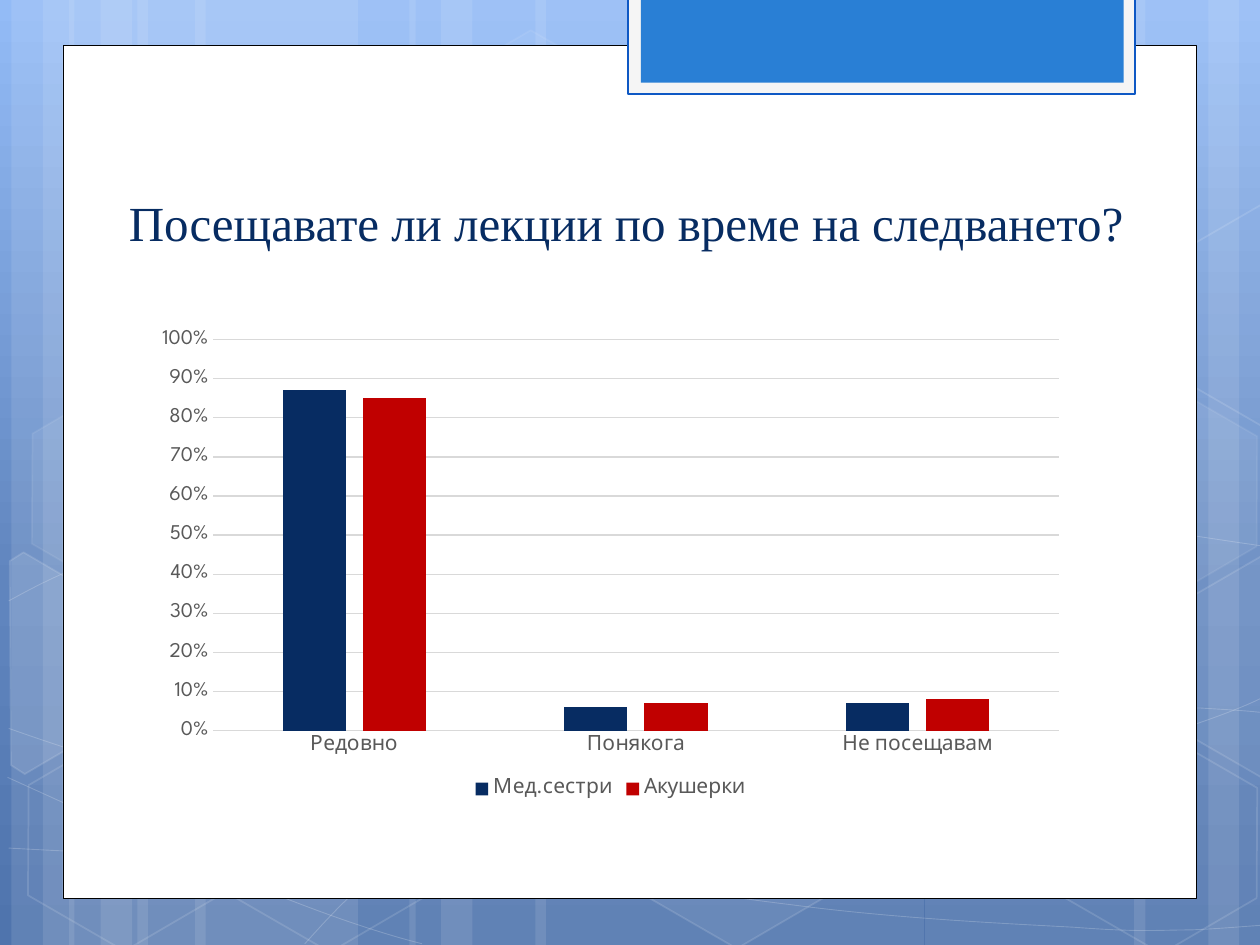
from copy import deepcopy
from math import cos, radians, sin

from lxml.etree import SubElement
from pptx import Presentation
from pptx.chart.data import CategoryChartData
from pptx.dml.color import RGBColor
from pptx.enum.chart import XL_CHART_TYPE, XL_LEGEND_POSITION, XL_TICK_MARK
from pptx.enum.shapes import MSO_SHAPE
from pptx.enum.text import MSO_ANCHOR, PP_ALIGN
from pptx.oxml.ns import qn
from pptx.util import Pt

WHITE = RGBColor(0xFF, 0xFF, 0xFF)
BLACK = RGBColor(0, 0, 0)
PALE = RGBColor(0xF5, 0xF5, 0xF5)
BLUE = RGBColor(0x29, 0x7F, 0xD5)
EDGE = RGBColor(0x0E, 0x58, 0xC4)
NAVY = RGBColor(0x07, 0x2C, 0x62)
RED = RGBColor(0xC0, 0, 0)
GREY = RGBColor(0x59, 0x59, 0x59)
GRID = RGBColor(0xD9, 0xD9, 0xD9)
SKY = [(0, RGBColor(0x93, 0xBB, 0xF6)), (0.62, RGBColor(0x60, 0x85, 0xBE)),
       (1, RGBColor(0x4F, 0x74, 0xAD))]

STRIPES = [
    (78.5, 126, 0), (6.5, 36, 0), (24.5, 60, 0), (111.5, 126, 0),
    (39.5, 36, 0), (57.5, 60, 0), (528.5, 126, 180), (690.5, 36, 180),
    (648, 60, 180), (306, 222, 0), (234, 36, 0), (252, 60, 0),
]
CURVES = [
    [(5, 484.6), (43.9, 486.7), (82.8, 488.9), (136.8, 488.2),
     (190.8, 487.4), (257.8, 486), (329.8, 478.8),
     (401.8, 471.6), (504, 457.9), (570.2, 444.2),
     (635.8, 430.6), (703.4, 409), (725, 396.7)],
    [(5, 343.4), (25.9, 331.9), (46.8, 321.1), (87.1, 310.3),
     (128.2, 299.5), (186.5, 283.7), (249.8, 278.6),
     (313.9, 273.6), (391.7, 272.9), (470.9, 278.6),
     (550.1, 284.4), (681.8, 306.7), (725, 312.5)],
    [(4.3, 444.2), (91.4, 483.8), (177.8, 523.4), (241.2, 539.3)],
    [(5, 416.2), (27.4, 424.1), (50.4, 432), (92.2, 443.5),
     (133.9, 454.3), (196.6, 472.3), (257, 484.6),
     (316.8, 496.8), (392.4, 509.8), (452.2, 517),
     (511.9, 524.9), (576, 527.8), (614.2, 529.9),
     (652.3, 532.8), (661.7, 531.4), (680.4, 531.4),
     (699.1, 530.6), (712.1, 529.2), (725, 528.5)],
    [(174.2, 539.3), (187.2, 524.9), (200.2, 510.5), (217.4, 497.5),
     (234.7, 483.8), (259.2, 470.2), (279.4, 460.1),
     (299.5, 450), (311.8, 445.7), (337.7, 438.5),
     (364.3, 431.3), (412.6, 421.2), (437.8, 416.2),
     (463.7, 411.1), (467.3, 411.1), (489.6, 409.7),
     (511.2, 407.5), (547.2, 405.4), (571.7, 404.6),
     (596.9, 403.9), (637.9, 404.6), (637.9, 404.6),
     (637.9, 404.6), (686.2, 404.6), (686.2, 404.6),
     (699.1, 405.4), (711.4, 406.1), (717.8, 406.8),
     (724.3, 407.5), (722.2, 406.8), (724.3, 407.5)],
]
HEXAGONS = [
    (240.5, 25.9, 4, 8), (357.8, 424.1, 6, 12), (7.9, 425.5, None, 12),
    (10.1, 224.6, 7, 8), (125.3, 426.2, None, 12), (542.2, 326.2, 10, 12),
    (600.5, 427, None, 12), (600.5, 226.1, 7, 8),
]
LEFT_CUT = [(5.8, 320.4), (13.7, 315.4), (69.1, 347.8),
            (68.4, 410.4), (14.4, 442.1), (6.5, 437)]
RIGHT_CUT = [(666.7, 349.2), (721.4, 317.5), (726.5, 321.1),
             (726.5, 441.4), (721.4, 444.2), (666.7, 412.6)]
CUTS = [(LEFT_CUT, (25.9, 385.9), 0, 10), (RIGHT_CUT, (709.2, 374.4), 0, 4),
        (RIGHT_CUT, (709.2, 374.4), 200.9, None)]


def set_values(target, values):
    for name, value in values.items():
        setattr(target, name, value)


def set_alpha(shape, route, percent):
    color = shape.element.spPr.find(route + qn("a:solidFill")).find(qn("a:srgbClr"))
    SubElement(color, qn("a:alpha")).set("val", str(percent * 1000))


def paint(shape, fill=None, line=None, width=1, fill_alpha=None, line_alpha=None):
    shape.shadow.inherit = False
    for part, color in ((shape.fill, fill), (shape.line.fill, line)):
        if color is None:
            part.background()
        else:
            part.solid()
            part.fore_color.rgb = color
    if line is not None:
        shape.line.width = Pt(width)
    if fill_alpha:
        set_alpha(shape, "", fill_alpha)
    if line_alpha:
        set_alpha(shape, qn("a:ln") + "/", line_alpha)


def add_preset(page, kind, box, **look):
    shape = page.shapes.add_shape(kind, *map(Pt, box))
    paint(shape, **look)
    return shape


def add_outline(page, points, close, **look):
    spots = [(Pt(x), Pt(y)) for x, y in points]
    builder = page.shapes.build_freeform(*spots[0])
    builder.add_line_segments(spots[1:], close=close)
    shape = builder.convert_to_shape()
    paint(shape, **look)
    return shape


def bend(shape, knots):
    outline = next(shape.element.iter(qn("a:path")))
    lines = outline.findall(qn("a:lnTo"))
    for start in range(0, len(lines), 3):
        trio = lines[start:start + 3]
        a, b, c, d = knots[start:start + 4]
        if a == b and c == d:
            for line in trio[:2]:
                outline.remove(line)
            continue
        curve = trio[0].makeelement(qn("a:cubicBezTo"))
        trio[0].addprevious(curve)
        for line in trio:
            curve.append(line[0])
            outline.remove(line)


def turn(point, center, degrees):
    angle = radians(degrees)
    x, y = point[0] - center[0], point[1] - center[1]
    return (center[0] + x * cos(angle) - y * sin(angle),
            center[1] + x * sin(angle) + y * cos(angle))


def add_sky(page):
    fill = page.background.fill
    fill.gradient()
    fill.gradient_angle = 270
    stop_list = next(page.element.iter(qn("a:gsLst")))
    stop_list.append(deepcopy(stop_list[-1]))
    for stop, (position, color) in zip(fill.gradient_stops, SKY):
        stop.position = position
        stop.color.rgb = color


def add_backdrop(page, box):
    left, top, width, height = box
    for x, stripe_width, rotation in STRIPES:
        stripe = add_preset(page, MSO_SHAPE.RECTANGLE, (left + x, top, stripe_width, height),
                            fill=WHITE, fill_alpha=10)
        stripe.rotation = rotation
    for knots in CURVES:
        points = [(left + x, top + y) for x, y in knots]
        curve = add_outline(page, points, False, line=WHITE, width=0.5, line_alpha=20)
        bend(curve, knots)
    for x, y, fill_alpha, line_alpha in HEXAGONS:
        hexagon = add_preset(
            page, MSO_SHAPE.HEXAGON, (left + x, top + y, 126, 109.4),
            fill=WHITE if fill_alpha else None, line=WHITE,
            fill_alpha=fill_alpha, line_alpha=line_alpha)
        hexagon.rotation = 30
        hexagon.adjustments[0] = 0.285
    for corners, center, rise, fill_alpha in CUTS:
        upright = [turn(corner, center, -30) for corner in corners]
        cut = add_outline(page, [(left + x, top + y - rise) for x, y in upright], True,
                          fill=WHITE if fill_alpha else None, line=WHITE,
                          fill_alpha=fill_alpha, line_alpha=12)
        cut.rotation = 30


def add_frame(page, box):
    left, top, width, height = box
    add_preset(page, MSO_SHAPE.RECTANGLE, box, fill=WHITE, line=BLACK, width=0.5)
    add_preset(page, MSO_SHAPE.RECTANGLE, (left + 323, top - 27.6, 289.8, 55.4),
               fill=PALE, line=EDGE, width=1.25)
    add_preset(page, MSO_SHAPE.RECTANGLE, (left + 330.2, top - 27.6, 275.9, 49), fill=BLUE)


def add_title(page, box):
    frame = page.shapes.add_textbox(*map(Pt, box)).text_frame
    set_values(frame, {"word_wrap": True, "vertical_anchor": MSO_ANCHOR.BOTTOM,
                       "margin_left": Pt(13.8)})
    para = frame.paragraphs[0]
    para.alignment = PP_ALIGN.LEFT
    span = para.add_run()
    span.text = "Посещавате ли лекции по време на следването?"
    set_values(span.font, {"name": "Times New Roman", "size": Pt(28)})
    span.font.color.rgb = NAVY


def style_font(font, size, color):
    set_values(font, {"name": "League Spartan", "size": Pt(size)})
    font.color.rgb = color


def add_attendance_chart(page, box):
    data = CategoryChartData(number_format="0%")
    data.categories = ["Редовно", "Понякога", "Не посещавам"]
    data.add_series("Мед.сестри", (0.87, 0.06, 0.07))
    data.add_series("Акушерки", (0.85, 0.07, 0.08))
    chart = page.shapes.add_chart(XL_CHART_TYPE.COLUMN_CLUSTERED, *map(Pt, box), data).chart
    set_values(chart, {"has_title": False, "has_legend": True})
    set_values(chart.legend, {"position": XL_LEGEND_POSITION.BOTTOM,
                              "include_in_layout": False})
    style_font(chart.font, 10, BLACK)
    style_font(chart.legend.font, 12, GREY)
    plot = chart.plots[0]
    set_values(plot, {"gap_width": 219, "overlap": -27, "vary_by_categories": False})
    for series, color in zip(plot.series, (NAVY, RED)):
        series.format.fill.solid()
        series.format.fill.fore_color.rgb = color
    values = chart.value_axis
    set_values(values, {"minimum_scale": 0, "maximum_scale": 1, "major_unit": 0.1,
                        "has_major_gridlines": True})
    set_values(values.tick_labels, {"number_format": "0%", "number_format_is_linked": False})
    for axis in (chart.category_axis, values):
        set_values(axis, {"major_tick_mark": XL_TICK_MARK.NONE,
                          "minor_tick_mark": XL_TICK_MARK.NONE})
        style_font(axis.tick_labels.font, 12, GREY)
    values.format.line.fill.background()
    for line in (chart.category_axis.format.line, values.major_gridlines.format.line):
        line.color.rgb = GRID
        line.width = Pt(0.75)


deck = Presentation()
set_values(deck, {"slide_width": Pt(720), "slide_height": Pt(540)})
page = deck.slides.add_slide(deck.slide_layouts[6])
add_sky(page)
add_backdrop(page, (0, 0, 720, 540))
add_frame(page, (36, 25.9, 648, 487.4))
add_title(page, (59.8, 82.8, 640.8, 64.1))
add_attendance_chart(page, (82.1, 182.9, 533.5, 276.5))
deck.save("out.pptx")
